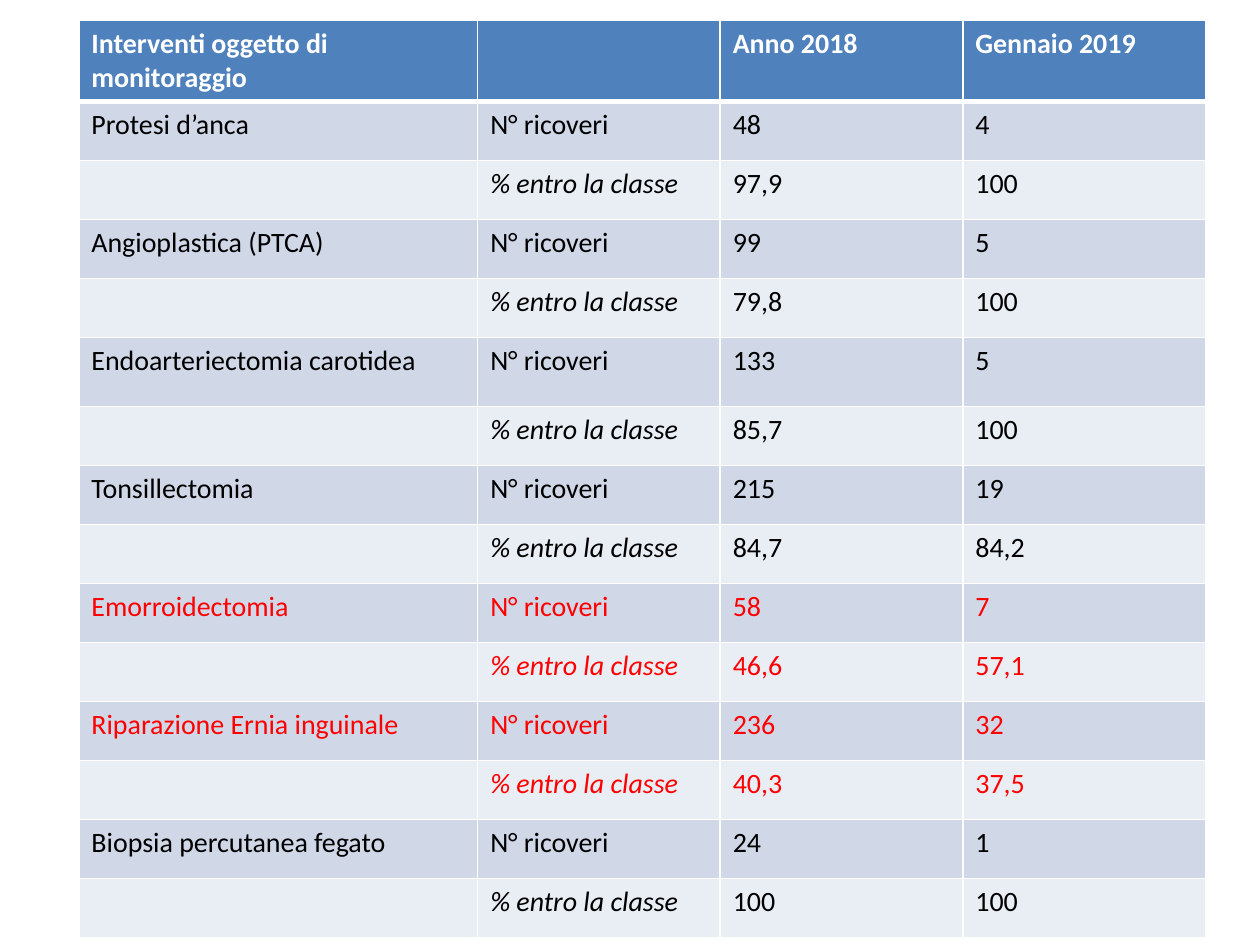
from typing import NamedTuple

from lxml.etree import SubElement
from pptx import Presentation
from pptx.dml.color import RGBColor
from pptx.oxml.ns import qn
from pptx.table import _Cell
from pptx.util import Cm, Pt

WHITE, BLACK, RED = "FFFFFF", "000000", "FF0000"
HEADER_FILL, COUNT_FILL, SHARE_FILL = "4F81BD", "D0D8E8", "E9EDF4"
COLUMN_WIDTHS = (8.04, 4.89, 4.89, 4.89)
ROW_HEIGHT, TALL_ROW_HEIGHT = 1.19, 1.39
HEADINGS = ("Interventi oggetto di monitoraggio", "", "Anno 2018", "Gennaio 2019")


class Procedure(NamedTuple):
    name: str
    counts: tuple[str, str]
    shares: tuple[str, str]
    color: str = BLACK
    count_height: float = ROW_HEIGHT


PROCEDURES = (
    Procedure("Protesi d’anca", ("48", "4"), ("97,9", "100")),
    Procedure("Angioplastica (PTCA)", ("99", "5"), ("79,8", "100")),
    Procedure("Endoarteriectomia carotidea", ("133", "5"), ("85,7", "100"),
              count_height=TALL_ROW_HEIGHT),
    Procedure("Tonsillectomia", ("215", "19"), ("84,7", "84,2")),
    Procedure("Emorroidectomia", ("58", "7"), ("46,6", "57,1"), RED),
    Procedure("Riparazione Ernia inguinale", ("236", "32"), ("40,3", "37,5"), RED),
    Procedure("Biopsia percutanea fegato", ("24", "1"), ("100", "100")),
)


class Row(NamedTuple):
    texts: tuple[str, ...]
    fill: str
    color: str
    height: float = ROW_HEIGHT
    bold: bool = False
    italic_column: int | None = None
    top_line: float = 1
    bottom_line: float = 1


def rgb(value: str) -> RGBColor:
    return RGBColor.from_string(value)


def write(cell: _Cell, text: str, *, color: str, bold: bool = False,
          italic: bool = False, size: float = 16) -> None:
    paragraph = cell.text_frame.paragraphs[0]
    # An empty cell keeps its size through the paragraph font.
    font = paragraph.font
    if text:
        run = paragraph.add_run()
        run.text = text
        font = run.font
    font.name, font.size = "Calibri", Pt(size)
    font.bold, font.italic = bold, italic
    font.color.rgb = rgb(color)


def add_borders(cell: _Cell, top: float, bottom: float) -> None:
    """Draw white borders; call before filling, as the schema puts lines first."""
    properties = cell._tc.get_or_add_tcPr()
    for side, width in (("L", 1), ("R", 1), ("T", top), ("B", bottom)):
        line = SubElement(properties, qn(f"a:ln{side}"), w=str(Pt(width)))
        solid = SubElement(line, qn("a:solidFill"))
        SubElement(solid, qn("a:srgbClr"), val=WHITE)


def table_rows() -> list[Row]:
    rows = [Row(HEADINGS, HEADER_FILL, WHITE, bold=True, bottom_line=3)]
    for index, procedure in enumerate(PROCEDURES):
        rows.append(Row((procedure.name, "N° ricoveri", *procedure.counts),
                        COUNT_FILL, procedure.color, procedure.count_height,
                        top_line=3 if index == 0 else 1))
        rows.append(Row(("", "% entro la classe", *procedure.shares),
                        SHARE_FILL, procedure.color, italic_column=1))
    return rows


def main() -> None:
    presentation = Presentation()
    presentation.slide_width, presentation.slide_height = Cm(25.4), Cm(19.05)
    slide = presentation.slides.add_slide(presentation.slide_layouts[6])

    rows = table_rows()
    monitoring = slide.shapes.add_table(
        len(rows), len(COLUMN_WIDTHS), Cm(1.59), Cm(0.41),
        Cm(sum(COLUMN_WIDTHS)), Cm(sum(row.height for row in rows))).table
    for column, width in zip(monitoring.columns, COLUMN_WIDTHS):
        column.width = Cm(width)

    for row_index, row in enumerate(rows):
        monitoring.rows[row_index].height = Cm(row.height)
        for column_index, text in enumerate(row.texts):
            cell = monitoring.cell(row_index, column_index)
            write(cell, text, color=row.color, bold=row.bold,
                  italic=column_index == row.italic_column)
            add_borders(cell, row.top_line, row.bottom_line)
            cell.fill.solid()
            cell.fill.fore_color.rgb = rgb(row.fill)

    presentation.save("out.pptx")


if __name__ == "__main__":
    main()
